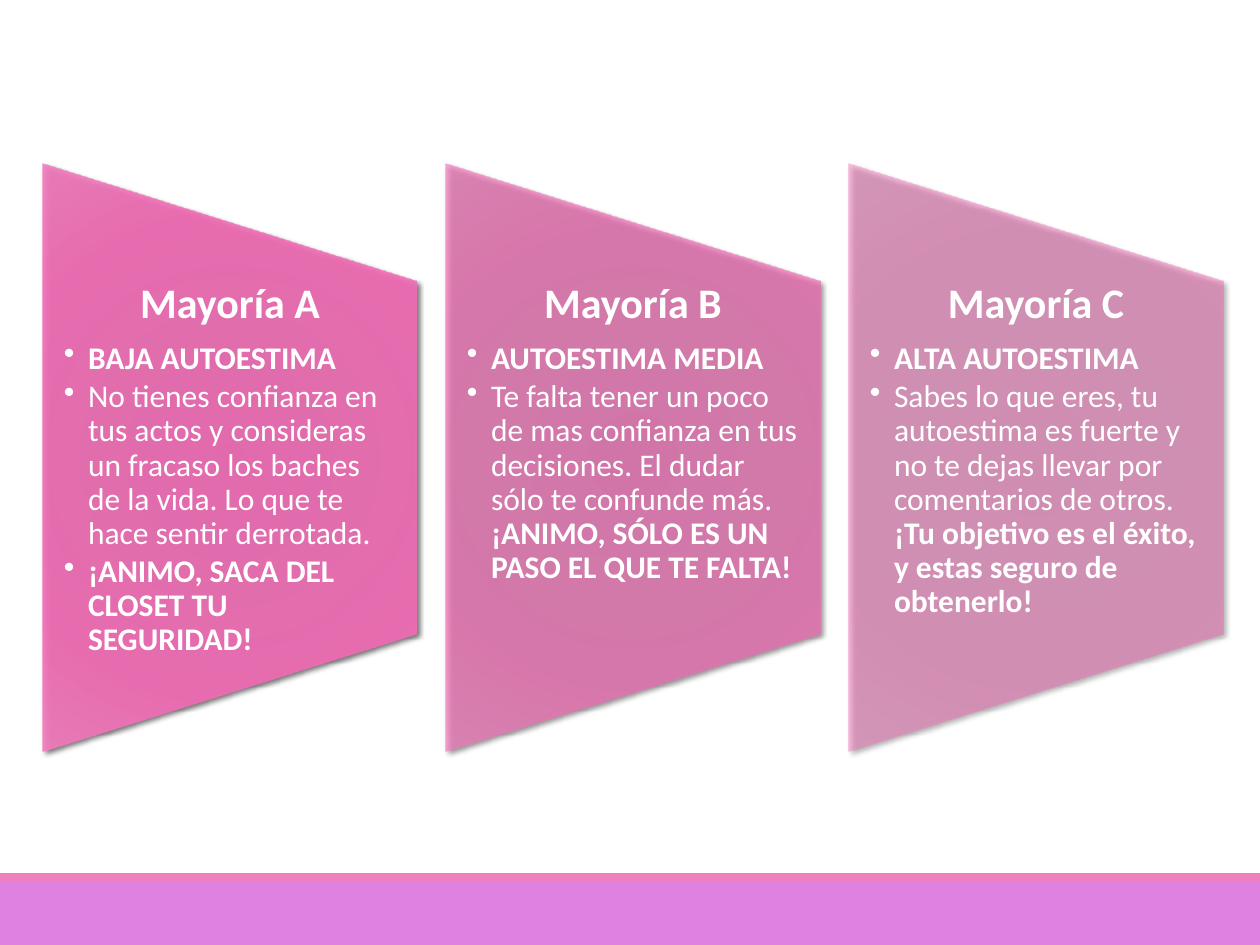
"""Build a slide with three trapezoid cards that explain the self-esteem results."""
from dataclasses import dataclass

from lxml.etree import SubElement
from pptx import Presentation
from pptx.dml.color import RGBColor
from pptx.enum.shapes import MSO_SHAPE as Preset
from pptx.enum.text import MSO_ANCHOR as Anchor, PP_ALIGN as Align
from pptx.oxml import parse_xml
from pptx.oxml.ns import nsdecls, qn
from pptx.slide import Slide
from pptx.util import Emu, Pt

EMU_PER_INCH = 914400
PX_PER_INCH = 126

WHITE = RGBColor(0xFF, 0xFF, 0xFF)
BLACK = RGBColor(0x00, 0x00, 0x00)
VIOLET = RGBColor(0xDF, 0x81, 0xE1)
PINK = RGBColor(0xEE, 0x81, 0xBD)
GRADIENT = (
    (0, RGBColor(0xED, 0x69, 0xB2)),
    (34, RGBColor(0xED, 0x6D, 0xB3)),
    (70, RGBColor(0xF3, 0x6C, 0xB6)),
    (100, RGBColor(0xF3, 0x7C, 0xBE)),
)

CARD_LEFT, CARD_TOP, CARD_WIDTH, CARD_HEIGHT = 43, 164, 374, 587
CARD_PITCH = 403
TEXT_TOP, TEXT_HEIGHT = 282, 352
INSET, INDENT = 21, 24

TITLE_FORMAT = {"alignment": Align.CENTER, "line_spacing": 0.9, "space_after": Pt(8.4)}
BULLET_FORMAT = {"alignment": Align.LEFT, "line_spacing": 0.9, "space_after": Pt(2.7), "level": 1}


@dataclass(frozen=True)
class Words:
    text: str
    bold: bool = True


@dataclass(frozen=True)
class Card:
    title: str
    opacity: int
    bullets: tuple[tuple[Words, ...], ...]


CARDS = (
    Card("Mayoría A", 90, (
        (Words("BAJA AUTOESTIMA"),),
        (Words("No tienes confianza en tus actos y consideras un fracaso los baches "
               "de la vida. Lo que te hace sentir derrotada.", False),),
        (Words("¡ANIMO, SACA DEL CLOSET TU SEGURIDAD!"),),
    )),
    Card("Mayoría B", 70, (
        (Words("AUTOESTIMA MEDIA"),),
        (Words("Te falta tener un poco de mas confianza en tus decisiones. "
               "El dudar sólo te confunde más. ", False),
         Words("¡ANIMO, SÓLO ES UN PASO EL QUE TE FALTA!")),
    )),
    Card("Mayoría C", 50, (
        (Words("ALTA AUTOESTIMA"),),
        (Words("Sabes lo que eres, tu autoestima es fuerte y no te dejas llevar "
               "por comentarios de otros. ", False),
         Words("¡Tu objetivo es el éxito, y estas seguro de obtenerlo!")),
    )),
)


def px(length: float) -> Emu:
    return Emu(round(length * EMU_PER_INCH / PX_PER_INCH))


def set_format(target: object, values: dict) -> None:
    for name, value in values.items():
        setattr(target, name, value)


def draw_band(slide: Slide, top: int, height: int, color: RGBColor) -> None:
    band = slide.shapes.add_shape(Preset.RECTANGLE, 0, px(top), px(1260), px(height))
    band.shadow.inherit = False
    band.fill.solid()
    band.fill.fore_color.rgb = color
    band.line.fill.background()


def draw_trapezoid(slide: Slide, left: int, opacity: int) -> None:
    shift = (CARD_HEIGHT - CARD_WIDTH) / 2
    shape = slide.shapes.add_shape(
        Preset.FLOWCHART_MANUAL_OPERATION,
        px(left - shift), px(CARD_TOP + shift), px(CARD_HEIGHT), px(CARD_WIDTH))
    shape.rotation = 270
    shape.line.fill.background()
    shape.shadow.inherit = False
    properties = shape._element.spPr
    stops = "".join(
        f'<a:gs pos="{place * 1000}"><a:srgbClr val="{color}">'
        f'<a:alpha val="{opacity * 1000}"/></a:srgbClr></a:gs>'
        for place, color in GRADIENT)
    gradient = parse_xml(
        f'<a:gradFill {nsdecls("a")} rotWithShape="1"><a:gsLst>{stops}</a:gsLst>'
        '<a:path path="circle"><a:fillToRect l="100000" t="100000" r="100000" b="100000"/>'
        '</a:path></a:gradFill>')
    properties.find(qn("a:prstGeom")).addnext(gradient)
    shadow = parse_xml(
        f'<a:outerShdw {nsdecls("a")} blurRad="{Pt(3)}" dist="{Pt(2)}" dir="2700000" '
        f'rotWithShape="0"><a:srgbClr val="{BLACK}"><a:alpha val="60000"/></a:srgbClr>'
        '</a:outerShdw>')
    properties.find(qn("a:effectLst")).append(shadow)


def add_words(para: object, words: Words, size: int) -> None:
    span = para.add_run()
    span.text = words.text
    set_format(span.font, {"name": "Calibri", "size": Pt(size), "bold": words.bold})
    span.font.color.rgb = WHITE


def draw_text(slide: Slide, left: int, card: Card) -> None:
    box = slide.shapes.add_textbox(px(left), px(TEXT_TOP), px(CARD_WIDTH), px(TEXT_HEIGHT))
    frame = box.text_frame
    set_format(frame, {
        "word_wrap": True, "vertical_anchor": Anchor.TOP,
        "margin_left": px(INSET), "margin_right": px(INSET),
        "margin_top": 0, "margin_bottom": 0,
    })
    title = frame.paragraphs[0]
    set_format(title, TITLE_FORMAT)
    add_words(title, Words(card.title), 24)
    for bullet in card.bullets:
        para = frame.add_paragraph()
        set_format(para, BULLET_FORMAT)
        properties = para._p.get_or_add_pPr()
        properties.set("marL", str(px(INDENT)))
        properties.set("indent", str(px(-INDENT)))
        SubElement(properties, qn("a:buChar")).set("char", "•")
        for words in bullet:
            add_words(para, words, 18)


def main() -> None:
    deck = Presentation()
    deck.slide_width, deck.slide_height = px(1260), px(945)
    page = deck.slides.add_slide(deck.slide_layouts[6])
    draw_band(page, 882, 63, VIOLET)
    draw_band(page, 873, 9, PINK)
    for index, card in enumerate(CARDS):
        left = CARD_LEFT + index * CARD_PITCH
        draw_trapezoid(page, left, card.opacity)
        draw_text(page, left, card)
    deck.save("out.pptx")


if __name__ == "__main__":
    main()
